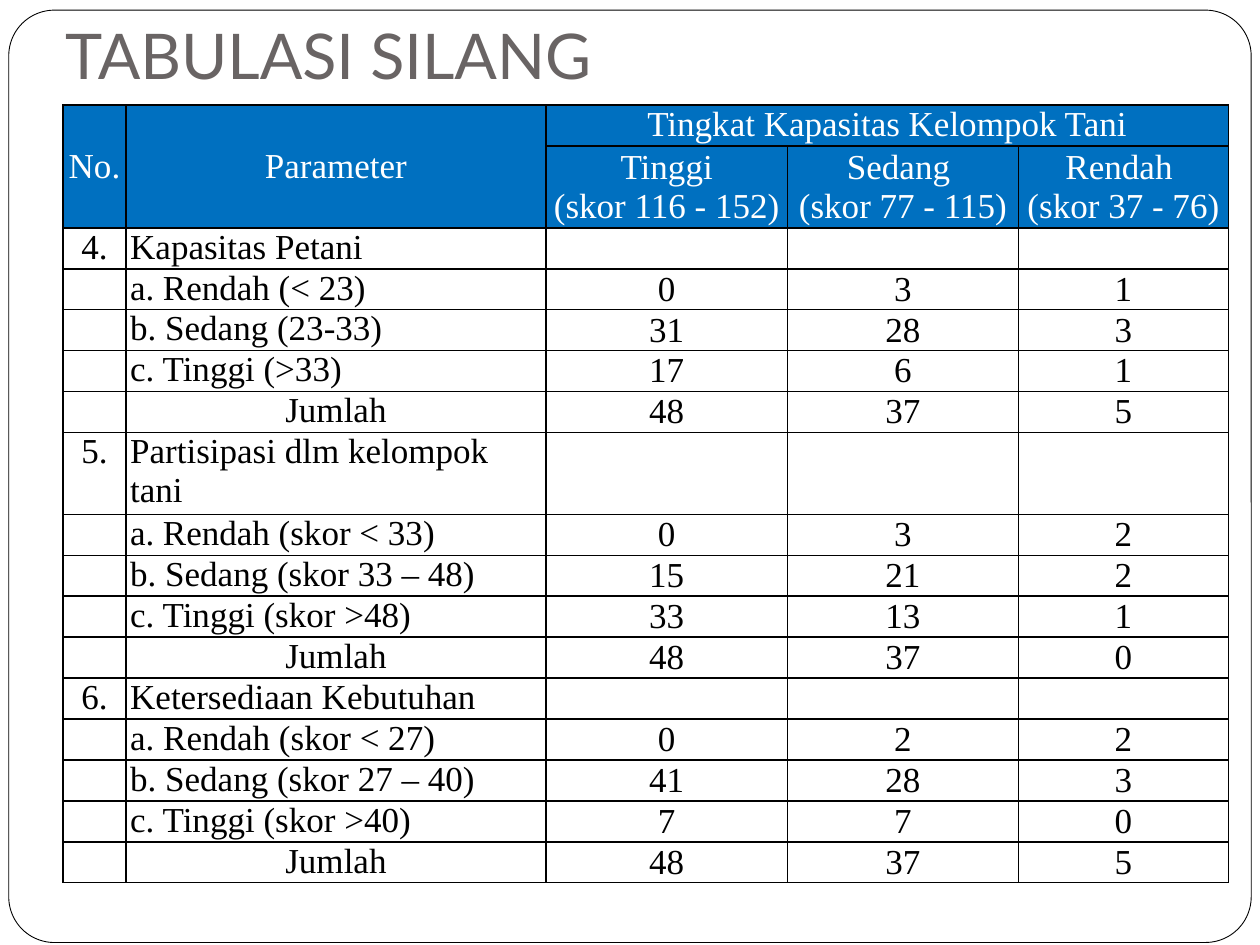
from lxml.etree import SubElement
from pptx import Presentation
from pptx.dml.color import RGBColor
from pptx.enum.shapes import MSO_SHAPE
from pptx.enum.text import MSO_ANCHOR, MSO_AUTO_SIZE, PP_ALIGN
from pptx.oxml.ns import qn
from pptx.util import Pt

BLACK = RGBColor(0x00, 0x00, 0x00)
WHITE = RGBColor(0xFF, 0xFF, 0xFF)
BLUE = RGBColor(0x00, 0x70, 0xC0)
GRAY = RGBColor(0x69, 0x64, 0x64)

TITLE = "TABULASI SILANG"
LEVEL_TITLE = "Tingkat Kapasitas Kelompok Tani"
LEVELS = ["Tinggi\n(skor 116 - 152)", "Sedang \n(skor 77 - 115)", "Rendah \n(skor 37 - 76)"]
GROUPS = [
    ("4.", "Kapasitas Petani", [
        ("Rendah (< 23)", 0, 3, 1),
        ("b. Sedang (23-33)", 31, 28, 3),
        ("c. Tinggi (>33)", 17, 6, 1),
        ("Jumlah", 48, 37, 5),
    ]),
    ("5.", "Partisipasi dlm kelompok tani", [
        ("Rendah (skor < 33)", 0, 3, 2),
        ("b. Sedang (skor 33 – 48)", 15, 21, 2),
        ("c. Tinggi (skor >48)", 33, 13, 1),
        ("Jumlah", 48, 37, 0),
    ]),
    ("6.", "Ketersediaan Kebutuhan", [
        ("a. Rendah (skor < 27)", 0, 2, 2),
        ("b. Sedang (skor 27 – 40)", 41, 28, 3),
        ("c. Tinggi (skor >40)", 7, 7, 0),
        ("Jumlah", 48, 37, 5),
    ]),
]
COLUMN_WIDTHS = [36, 240, 138, 132, 120]
ROW_HEIGHT = 23.4
TALL_ROWS = {1, 7}
HEADER_ROWS = 2


def set_attributes(target, values):
    for name, value in values.items():
        setattr(target, name, value)


def format_cell(cell, color=None):
    set_attributes(cell, {"margin_left": Pt(2.4), "margin_right": Pt(2.4),
                          "margin_top": 0, "margin_bottom": 0})
    properties = cell._tc.get_or_add_tcPr()
    for side in ("a:lnL", "a:lnR", "a:lnT", "a:lnB"):
        border = SubElement(properties, qn(side), w=str(Pt(1)))
        border_fill = SubElement(border, qn("a:solidFill"))
        SubElement(border_fill, qn("a:srgbClr"), val=str(BLACK))
    if color is None:
        cell.fill.background()
    else:
        cell.fill.solid()
        cell.fill.fore_color.rgb = color


def write_cell(cell, text, color=BLACK, align=PP_ALIGN.CENTER, anchor=MSO_ANCHOR.MIDDLE):
    cell.text = str(text)
    cell.vertical_anchor = anchor
    for paragraph in cell.text_frame.paragraphs:
        paragraph.alignment = align
        for run in paragraph.runs:
            set_attributes(run.font, {"name": "Times New Roman", "size": Pt(20)})
            run.font.color.rgb = color


def indent_item(cell, numbered):
    indent = Pt(18.72 if numbered else 27)
    properties = cell.text_frame.paragraphs[0]._p.get_or_add_pPr()
    properties.set("marL", str(indent))
    properties.set("indent", str(-indent))
    if numbered:
        SubElement(properties, qn("a:buFont"), typeface="Times New Roman")
        SubElement(properties, qn("a:buAutoNum"), type="alphaLcPeriod")


def add_frame(slide):
    frame = slide.shapes.add_shape(MSO_SHAPE.ROUNDED_RECTANGLE, Pt(5), Pt(5.8), Pt(710), Pt(532.8))
    frame.adjustments[0] = 0.049
    frame.shadow.inherit = False
    frame.fill.solid()
    frame.fill.fore_color.rgb = WHITE
    frame.line.color.rgb = BLACK
    frame.line.width = Pt(0.5)
    frame.element.getparent().insert(2, frame.element)


def add_title(slide):
    title = slide.shapes.title
    set_attributes(title, {"left": Pt(30), "top": Pt(12), "width": Pt(654), "height": Pt(48)})
    title.text = TITLE
    set_attributes(title.text_frame, {
        "auto_size": MSO_AUTO_SIZE.NONE, "word_wrap": True, "vertical_anchor": MSO_ANCHOR.BOTTOM,
        "margin_left": Pt(7.2), "margin_right": Pt(7.2),
        "margin_top": Pt(3.6), "margin_bottom": Pt(7.2)})
    paragraph = title.text_frame.paragraphs[0]
    paragraph.alignment = PP_ALIGN.LEFT
    set_attributes(paragraph.runs[0].font, {"name": "Lato", "size": Pt(36)})
    paragraph.runs[0].font.color.rgb = GRAY


def add_cross_table(slide):
    row_count = HEADER_ROWS + sum(1 + len(items) for _, _, items in GROUPS)
    heights = [ROW_HEIGHT * (2 if row in TALL_ROWS else 1) for row in range(row_count)]
    table = slide.shapes.add_table(row_count, len(COLUMN_WIDTHS), Pt(36), Pt(60),
                                   Pt(sum(COLUMN_WIDTHS)), Pt(sum(heights))).table
    set_attributes(table, {"first_row": False, "horz_banding": False})
    for column, width in zip(table.columns, COLUMN_WIDTHS):
        column.width = Pt(width)
    for index, (row, height) in enumerate(zip(table.rows, heights)):
        row.height = Pt(height)
        for cell in row.cells:
            format_cell(cell, BLUE if index < HEADER_ROWS else None)

    for column, heading in enumerate(("No.", "Parameter")):
        table.cell(0, column).merge(table.cell(1, column))
        write_cell(table.cell(0, column), heading, WHITE)
    table.cell(0, 2).merge(table.cell(0, 4))
    write_cell(table.cell(0, 2), LEVEL_TITLE, WHITE, anchor=MSO_ANCHOR.TOP)
    for column, level in enumerate(LEVELS, 2):
        write_cell(table.cell(1, column), level, WHITE)

    row = HEADER_ROWS
    for number, parameter, items in GROUPS:
        write_cell(table.cell(row, 0), number, anchor=MSO_ANCHOR.TOP)
        write_cell(table.cell(row, 1), parameter, align=PP_ALIGN.LEFT, anchor=MSO_ANCHOR.TOP)
        for row, (label, *counts) in enumerate(items, row + 1):
            is_total = label == "Jumlah"
            write_cell(table.cell(row, 1), label, anchor=MSO_ANCHOR.TOP,
                       align=PP_ALIGN.CENTER if is_total else PP_ALIGN.LEFT)
            if not is_total:
                indent_item(table.cell(row, 1), numbered=label.startswith("Rendah"))
            for column, count in enumerate(counts, 2):
                write_cell(table.cell(row, column), count)
        row += 1


def main():
    presentation = Presentation()
    set_attributes(presentation, {"slide_width": Pt(720), "slide_height": Pt(540)})
    slide = presentation.slides.add_slide(presentation.slide_layouts[5])
    add_frame(slide)
    add_title(slide)
    add_cross_table(slide)
    presentation.save("out.pptx")


if __name__ == "__main__":
    main()
